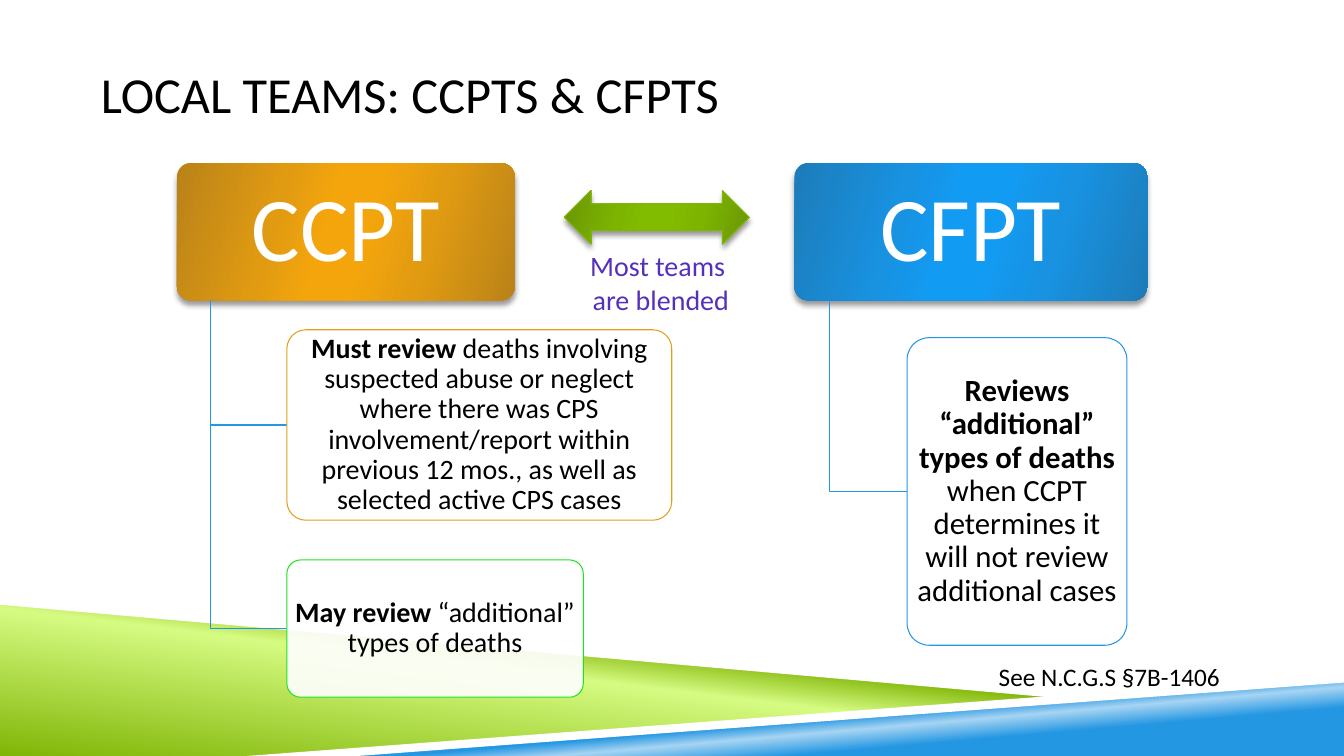
"""Build the slide that compares the CCPT and CFPT local teams."""
from pptx import Presentation
from pptx.dml.color import RGBColor
from pptx.enum.shapes import MSO_SHAPE
from pptx.enum.text import MSO_ANCHOR, PP_ALIGN
from pptx.oxml import parse_xml
from pptx.oxml.ns import nsdecls, qn
from pptx.util import Cm, Pt

FONT = "Calibri"
BLACK, WHITE, BLUE, GREEN, PURPLE = "000000", "FFFFFF", "2397E2", "80B606", "5430BB"
SHINE_STOPS = (0, 30, 45, 55, 73, 100)
SHINE_ANGLE = 16

BACKDROP = [
    ([(0, 15.16), (26.82, 17.58), (6.78, 19.05), (0, 19.05)],
     [(0, GREEN), (52, "D6FB82"), (66, GREEN)], 277),
    ([(6.71, 19.05), (33.87, 17.07), (33.87, 19.05)],
     [(28, BLUE), (40, "A7D5F3"), (48, BLUE)], 265),
    ([(0, 15.04), (0, 15.24), (26.77, 17.6), (28.17, 17.53)], None, 0),
    ([(33.87, 16.99), (6.22, 19.05), (9.02, 19.05), (33.87, 17.2)], None, 0),
]

TEAMS = [
    {"name": "CCPT", "box": (4.46, 4.11, 8.51, 3.46),
     "shine": ("B98218", "E19B12", "F4A50B"),
     "duties": [
         {"box": (7.23, 8.31, 9.7, 4.8), "line": "E29F1D", "size": 20,
          "text": [("Must review ", True),
                   ("deaths involving suspected abuse or neglect where there was CPS "
                    "involvement/report within previous 12 mos., as well as selected "
                    "active CPS cases", False)]},
         {"box": (7.23, 14.11, 7.47, 3.46), "line": "20E225", "size": 20,
          "text": [("May review ", True), ("“additional” types of deaths", False)]},
     ]},
    {"name": "CFPT", "box": (20.02, 4.11, 8.89, 3.46),
     "shine": ("1D7CB9", "1892E1", "129BF3"),
     "duties": [
         {"box": (22.86, 8.51, 5.54, 7.75), "line": BLUE, "size": 22,
          "text": [("Reviews “additional” types of deaths ", True),
                   ("when CCPT determines it will not review additional cases", False)]},
     ]},
]

ARROW = {"box": (14.22, 4.8, 4.66, 1.35), "shine": ("699505", "7CB400", "82BC00")}
TITLE = {"box": (2.54, 0.76, 28.78, 3.18), "lines": ["LOCAL TEAMS: CCPTS & CFPTS"],
         "size": 36, "color": BLACK, "insets": (0, 0.13),
         "anchor": MSO_ANCHOR.MIDDLE, "align": PP_ALIGN.LEFT}
BLEND = {"box": (14.53, 6.14, 4.09, 1.96), "lines": ["Most teams", " are blended"],
         "size": 20, "color": PURPLE, "insets": (0, 0.13),
         "anchor": MSO_ANCHOR.TOP, "align": PP_ALIGN.CENTER}
STATUTE = {"box": (24.92, 16.54, 8.9, 1.02), "lines": ["See N.C.G.S §7B-1406"],
           "size": 18, "color": BLACK, "insets": (0.25, 0.13),
           "anchor": MSO_ANCHOR.TOP, "align": PP_ALIGN.LEFT}


def rgb(color):
    return RGBColor.from_string(color)


def lengths(values):
    return [Cm(value) for value in values]


def fill_solid(shape, color):
    shape.fill.solid()
    shape.fill.fore_color.rgb = rgb(color)


def fill_gradient(shape, stops, angle):
    shape.fill.background()
    marks = "".join(f'<a:gs pos="{place * 1000}"><a:srgbClr val="{color}"/></a:gs>'
                    for place, color in stops)
    gradient = parse_xml(f'<a:gradFill {nsdecls("a")} rotWithShape="1"><a:gsLst>{marks}</a:gsLst>'
                         f'<a:lin ang="{angle * 60000}" scaled="0"/></a:gradFill>')
    properties = shape._element.spPr
    properties.replace(properties.find(qn("a:noFill")), gradient)


def set_line(shape, color):
    shape.line.color.rgb = rgb(color)
    shape.line.width = Pt(0.75)


def add_shadow(shape):
    effects = shape._element.spPr.find(qn("a:effectLst"))
    effects.append(parse_xml(
        f'<a:outerShdw {nsdecls("a")} blurRad="{Pt(4)}" dist="{Pt(3.3)}" dir="5400000" '
        'rotWithShape="0"><a:srgbClr val="000000"><a:alpha val="40000"/></a:srgbClr></a:outerShdw>'))


def add_outline(page, points, close):
    corners = [lengths(point) for point in points]
    builder = page.shapes.build_freeform(*corners[0], scale=1.0)
    builder.add_line_segments(corners[1:], close=close)
    shape = builder.convert_to_shape()
    shape.shadow.inherit = False
    return shape


def add_preset(page, kind, box):
    shape = page.shapes.add_shape(kind, *lengths(box))
    shape.shadow.inherit = False
    return shape


def add_shiny(page, kind, box, shine):
    shape = add_preset(page, kind, box)
    edge, middle, center = shine
    colors = (edge, middle, center, center, middle, edge)
    fill_gradient(shape, list(zip(SHINE_STOPS, colors)), SHINE_ANGLE)
    add_shadow(shape)
    return shape


def style_span(span, size, color, bold=False):
    span.font.name = FONT
    span.font.size = Pt(size)
    span.font.bold = bold
    span.font.color.rgb = rgb(color)


def set_frame(frame, insets, anchor):
    frame.margin_left = frame.margin_right = Cm(insets[0])
    frame.margin_top = frame.margin_bottom = Cm(insets[1])
    frame.vertical_anchor = anchor
    frame.word_wrap = True


def write_rounded(shape, spans, size, color, insets):
    shape.adjustments[0] = 0.1
    set_frame(shape.text_frame, insets, MSO_ANCHOR.MIDDLE)
    para = shape.text_frame.paragraphs[0]
    para.alignment = PP_ALIGN.CENTER
    para.line_spacing = 0.9
    for text, bold in spans:
        span = para.add_run()
        span.text = text
        style_span(span, size, color, bold)


def add_label(page, label):
    frame = page.shapes.add_textbox(*lengths(label["box"])).text_frame
    set_frame(frame, label["insets"], label["anchor"])
    frame.text = "\n".join(label["lines"])
    for para in frame.paragraphs:
        para.alignment = label["align"]
        for span in para.runs:
            style_span(span, label["size"], label["color"])


def add_duty(page, duty, stem, start):
    left, top, width, height = duty["box"]
    middle = top + height / 2
    elbow = add_outline(page, [(stem, start), (stem, middle), (left, middle)], False)
    elbow.fill.background()
    set_line(elbow, BLUE)
    box = add_preset(page, MSO_SHAPE.ROUNDED_RECTANGLE, duty["box"])
    fill_solid(box, WHITE)
    tint = box._element.spPr.find(qn("a:solidFill"))[0]
    tint.append(parse_xml(f'<a:alpha {nsdecls("a")} val="90000"/>'))
    set_line(box, duty["line"])
    write_rounded(box, duty["text"], duty["size"], BLACK, (0.05, 0.08))


def add_team(page, team):
    left, top, width, height = team["box"]
    header = add_shiny(page, MSO_SHAPE.ROUNDED_RECTANGLE, team["box"], team["shine"])
    header.line.fill.background()
    write_rounded(header, [(team["name"], False)], 65, WHITE, (0.35, 0.23))
    for duty in team["duties"]:
        add_duty(page, duty, left + width / 10, top + height)


def main():
    deck = Presentation()
    deck.slide_width, deck.slide_height = Cm(33.87), Cm(19.05)
    page = deck.slides.add_slide(deck.slide_layouts[6])
    for points, stops, angle in BACKDROP:
        band = add_outline(page, points, True)
        band.line.fill.background()
        if stops:
            fill_gradient(band, stops, angle)
        else:
            fill_solid(band, WHITE)
    for team in TEAMS:
        add_team(page, team)
    add_label(page, TITLE)
    arrow = add_shiny(page, MSO_SHAPE.LEFT_RIGHT_ARROW, ARROW["box"], ARROW["shine"])
    set_line(arrow, GREEN)
    for label in (BLEND, STATUTE):
        add_label(page, label)
    deck.save("out.pptx")


if __name__ == "__main__":
    main()
